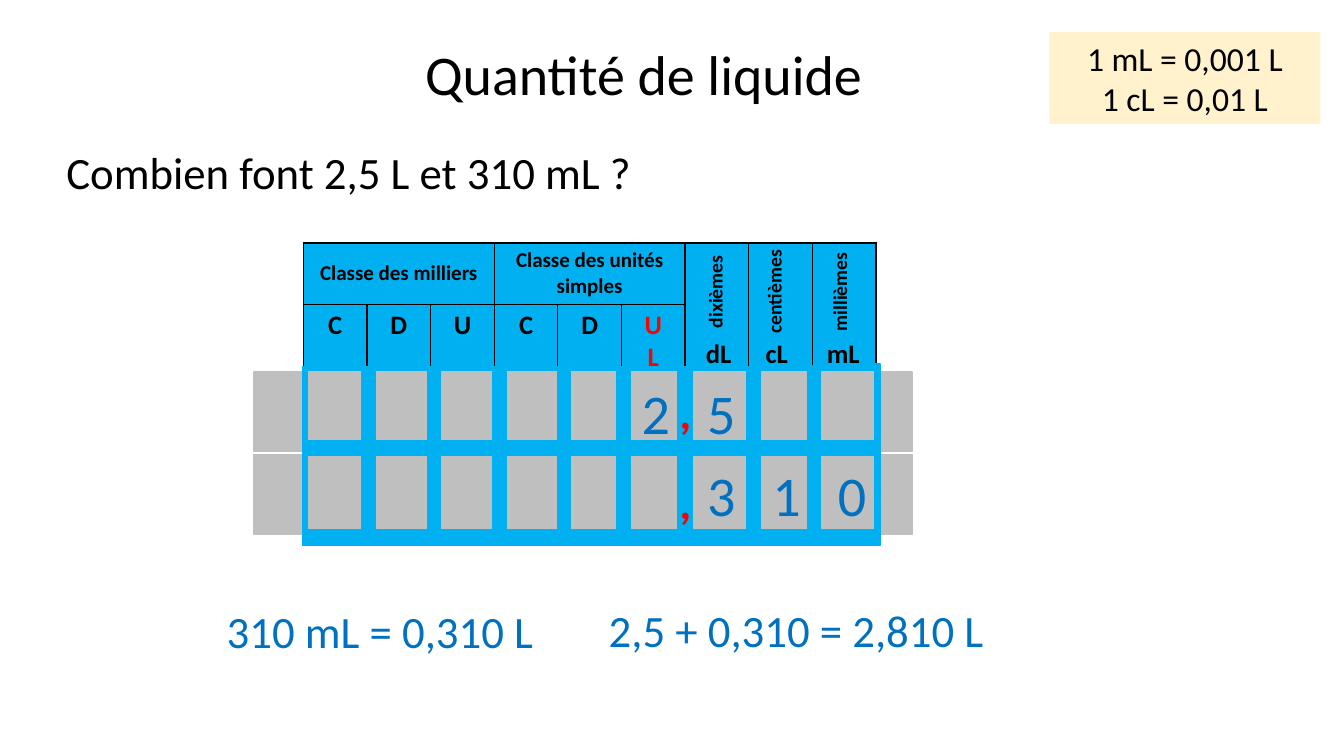
import dataclasses
import typing

import lxml.etree
import pptx
import pptx.dml.color
import pptx.enum.shapes
import pptx.enum.text
import pptx.oxml.ns
import pptx.util

Pt = pptx.util.Pt
RGBColor = pptx.dml.color.RGBColor
ALIGN = pptx.enum.text.PP_ALIGN
ANCHOR = pptx.enum.text.MSO_ANCHOR
qn = pptx.oxml.ns.qn

BLACK = RGBColor(0x00, 0x00, 0x00)
WHITE = RGBColor(0xFF, 0xFF, 0xFF)
RED = RGBColor(0xFF, 0x00, 0x00)
ANSWER_BLUE = RGBColor(0x00, 0x70, 0xC0)
GRID_BLUE = RGBColor(0x00, 0xB0, 0xF0)
STRIP_GREY = RGBColor(0xBF, 0xBF, 0xBF)
CREAM = RGBColor(0xFF, 0xF2, 0xCC)
FONT = "Calibri"


class Box(typing.NamedTuple):
    left: float
    top: float
    width: float
    height: float


@dataclasses.dataclass(frozen=True)
class Label:
    box: Box
    text: str
    size: float
    color: RGBColor = BLACK
    bold: bool = False
    align: ALIGN = ALIGN.LEFT
    rotation: float = 0
    wrap: bool = True
    inset: float = 7.2


def format_text(frame, size: float, color: RGBColor, bold: bool, align: ALIGN) -> None:
    for paragraph in frame.paragraphs:
        paragraph.alignment = align
        paragraph.font.name = FONT
        paragraph.font.size = Pt(size)
        paragraph.font.bold = bold
        paragraph.font.color.rgb = color


def add_label(slide, label: Label) -> None:
    shape = slide.shapes.add_textbox(*map(Pt, label.box))
    shape.rotation = label.rotation
    frame = shape.text_frame
    frame.word_wrap = label.wrap
    frame.margin_left = frame.margin_right = Pt(label.inset)
    frame.text = label.text
    format_text(frame, label.size, label.color, label.bold, label.align)


def add_block(slide, box: Box, color: RGBColor, outlined: bool = True):
    shape = slide.shapes.add_shape(pptx.enum.shapes.MSO_SHAPE.RECTANGLE, *map(Pt, box))
    shape.shadow.inherit = False
    shape.fill.solid()
    shape.fill.fore_color.rgb = color
    if outlined:
        shape.line.color.rgb = color
        shape.line.width = Pt(1)
    else:
        shape.line.fill.background()
    return shape


def border_cell(cell) -> None:
    properties = cell._tc.get_or_add_tcPr()
    for index, side in enumerate(("a:lnL", "a:lnR", "a:lnT", "a:lnB")):
        line = lxml.etree.Element(qn(side), w=str(Pt(1)))
        fill = lxml.etree.SubElement(line, qn("a:solidFill"))
        lxml.etree.SubElement(fill, qn("a:srgbClr"), val=str(BLACK))
        properties.insert(index, line)


def add_place_value_table(slide) -> None:
    table = slide.shapes.add_table(2, 9, Pt(216.7), Pt(173.5), Pt(409), Pt(95.5)).table
    for column in table.columns:
        column.width = Pt(45.44)
    for row, height in zip(table.rows, (42.5, 53)):
        row.height = Pt(height)
    for cell in table.iter_cells():
        cell.fill.solid()
        cell.fill.fore_color.rgb = GRID_BLUE
        border_cell(cell)
    for first, heading in ((0, "Classe des milliers"), (3, "Classe des unités simples")):
        cell = table.cell(0, first)
        cell.merge(table.cell(0, first + 2))
        cell.text = heading
        cell.vertical_anchor = ANCHOR.MIDDLE
        format_text(cell.text_frame, 15, BLACK, True, ALIGN.CENTER)
    for column in range(6, 9):
        table.cell(0, column).merge(table.cell(1, column))
    for column, rank in enumerate(("C", "D", "U", "C", "D", "U\nL")):
        cell = table.cell(1, column)
        cell.text = rank
        format_text(cell.text_frame, 19, RED if column == 5 else BLACK, True, ALIGN.CENTER)


def add_number_strip(slide, top: float, digits: str) -> None:
    strip = add_block(slide, Box(181.4, top, 470.2, 56.9), STRIP_GREY)
    frame = strip.text_frame
    frame.vertical_anchor = ANCHOR.MIDDLE
    frame.text = digits
    format_text(frame, 40, ANSWER_BLUE, False, ALIGN.LEFT)
    tabs = lxml.etree.SubElement(frame.paragraphs[0]._p.get_or_add_pPr(), qn("a:tabLst"))
    for rank in range(4):
        lxml.etree.SubElement(tabs, qn("a:tab"), pos=str(Pt(280 + 46.7 * rank)), algn="ctr")
    run_defaults = tabs.getparent().find(qn("a:defRPr"))
    if run_defaults is not None:
        run_defaults.addprevious(tabs)


GRID_BARS = [
    *(Box(left, 0, 9.4, 63.4) for left in (440.6, 398.2, 352.1, 305.3, 258.5)),
    Box(216, 0, 3.6, 63.4),
    Box(216, 52.6, 412.6, 10.8),
    Box(625, -2.2, 3.6, 63.4),
    Box(483.8, 0, 7.2, 63.4),
    Box(491, 0, 3.6, 60.5),
    Box(533.5, 0, 9.4, 58.3),
    Box(576.7, -0.7, 9.4, 58.3),
]


def add_grid(slide, top: float) -> None:
    for bar in GRID_BARS:
        add_block(slide, bar._replace(top=top + bar.top), GRID_BLUE)
    add_label(slide, Label(Box(485.5, top + 9.4, 7.2, 50.4), ",", 32, RED, True, wrap=False, inset=0))


DECIMAL_LABELS = [
    *(
        Label(Box(left, 196.2, width, 24.5), name, 14, bold=True, align=ALIGN.CENTER, rotation=270)
        for name, left, width in (
            ("dixièmes", 473, 75.6), ("centièmes", 511.2, 83.5), ("millièmes", 558, 83.5))
    ),
    *(
        Label(Box(left, 237, width, 30.2), unit, 19, bold=True, align=ALIGN.CENTER, wrap=False)
        for unit, left, width in (("dL", 496.8, 33.1), ("cL", 539.3, 31), ("mL", 583.2, 38.2))
    ),
]
ANSWERS = [
    Label(Box(154.8, 427.7, 255.6, 46), "310 mL = 0,310 L", 32, ANSWER_BLUE),
    Label(Box(427.7, 427, 323.3, 46), "2,5 + 0,310 = 2,810 L", 32, ANSWER_BLUE),
]


def add_title(slide) -> None:
    title = slide.shapes.title
    title.left, title.top, title.width, title.height = map(Pt, (144, 23.8, 631.4, 63.4))
    frame = title.text_frame
    frame.text = "Quantité de liquide"
    frame.vertical_anchor = ANCHOR.MIDDLE
    frame.auto_size = pptx.enum.text.MSO_AUTO_SIZE.NONE
    format_text(frame, 40, BLACK, False, ALIGN.CENTER)
    frame.paragraphs[0].line_spacing = 0.9


def main() -> None:
    presentation = pptx.Presentation()
    presentation.slide_width, presentation.slide_height = Pt(960), Pt(540)
    slide = presentation.slides.add_slide(presentation.slide_layouts[5])
    add_title(slide)

    question = add_block(slide, Box(40.3, 100.1, 615.6, 46), WHITE, outlined=False).text_frame
    question.text = "Combien font 2,5 L et 310 mL ?"
    question.vertical_anchor = ANCHOR.TOP
    format_text(question, 32, BLACK, False, ALIGN.LEFT)

    reminder = add_block(slide, Box(749.5, 23, 193.7, 65.5), CREAM, outlined=False).text_frame
    reminder.text = "1 mL = 0,001 L\n1 cL = 0,01 L"
    reminder.vertical_anchor = ANCHOR.MIDDLE
    format_text(reminder, 24, BLACK, False, ALIGN.CENTER)

    add_place_value_table(slide)
    for label in DECIMAL_LABELS + ANSWERS:
        add_label(slide, label)
    add_number_strip(slide, 324.7, "\t\t3\t1\t0")
    add_number_strip(slide, 265.7, "\t2\t5")
    for top in (262.1, 326.1):
        add_grid(slide, top)
    presentation.save("out.pptx")


if __name__ == "__main__":
    main()
